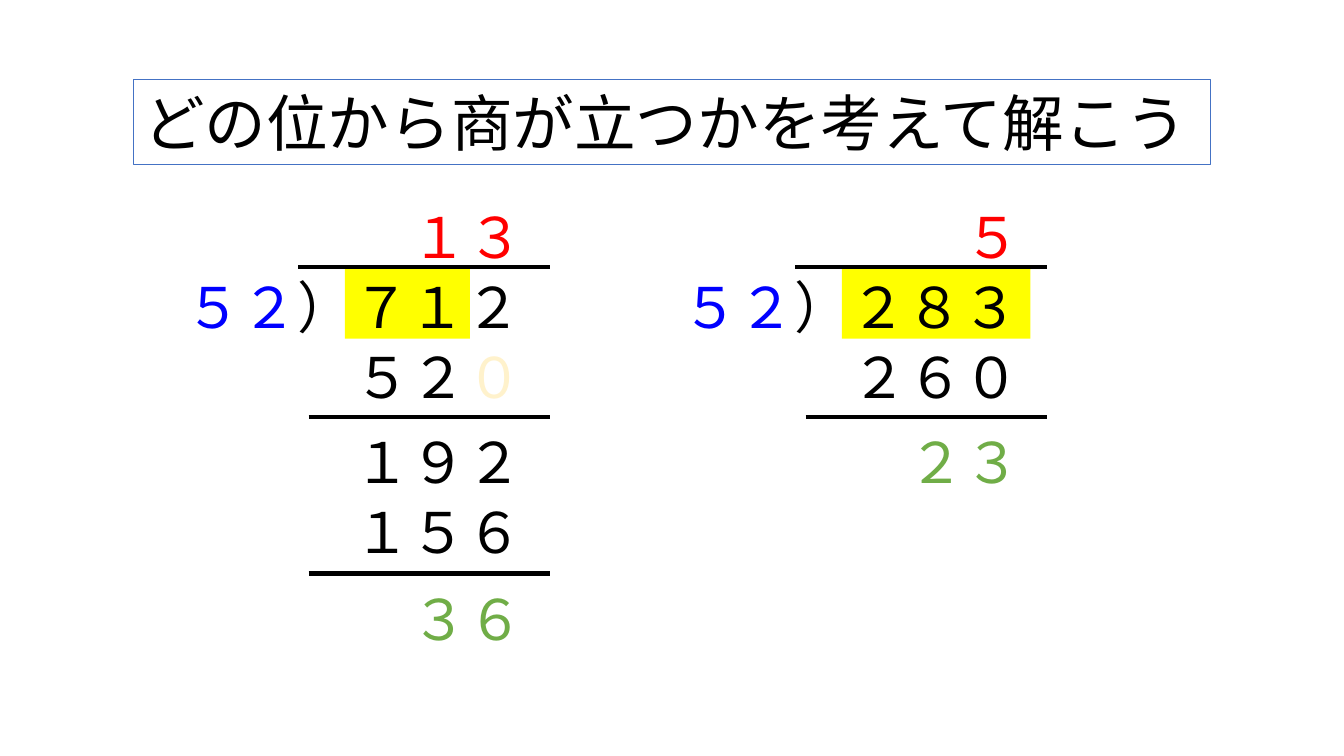
from lxml import etree
from pptx import Presentation
from pptx.dml.color import RGBColor
from pptx.enum.shapes import MSO_CONNECTOR, MSO_SHAPE
from pptx.enum.text import MSO_ANCHOR, MSO_AUTO_SIZE, PP_ALIGN
from pptx.oxml.ns import qn
from pptx.util import Inches, Pt

RECT = MSO_SHAPE.RECTANGLE
LINE = MSO_CONNECTOR.STRAIGHT
FONT = "Noto Sans CJK JP"
BLACK, BLUE, RED = "000000", "0000FF", "FF0000"
GREEN, PALE, YELLOW = "70AD47", "FFF2CC", "FFFF00"
COL, PAD, COLS = 0.56, 0.2, 6
ROWS = [1.96, 2.65, 3.35, 4.19, 4.89, 5.75]
RULES = [(1.22, 2.65), (1.32, 4.14), (1.32, 5.69)]
RIGHT = 3.71
FRAME = {"auto_size": MSO_AUTO_SIZE.SHAPE_TO_FIT_TEXT,
         "vertical_anchor": MSO_ANCHOR.TOP}


def color(code):
    """Turn a hex string into a colour."""
    return RGBColor.from_string(code)


def write(shape, runs, size, wrap):
    """Fill a shape with coloured runs of text."""
    frame = shape.text_frame
    for key, value in {**FRAME, "word_wrap": wrap}.items():
        setattr(frame, key, value)
    para = frame.paragraphs[0]
    para.alignment = PP_ALIGN.LEFT
    for text, code in runs:
        run = para.add_run()
        run.text = text
        for key, value in {"size": Pt(size), "name": FONT}.items():
            setattr(run.font, key, value)
        run.font.color.rgb = color(code)
        east = etree.SubElement(run.font._element, qn("a:ea"))
        east.set("typeface", FONT)


def box(slide, x, y, wide, high, fill=None, edge=None):
    """Add a plain rectangle."""
    shape = slide.shapes.add_shape(RECT, *map(Inches, (x, y, wide, high)))
    shape.shadow.inherit = False
    for part, code in ((shape.fill, fill), (shape.line.fill, edge)):
        if code:
            part.solid()
            part.fore_color.rgb = color(code)
        else:
            part.background()
    if edge:
        shape.line.width = Pt(0.75)
    return shape


def digits(slide, left, row, runs, skip=0):
    """Set digits on a row, ending skip columns before the ones."""
    count = sum(len(text) for text, _ in runs)
    x = left + COL * (COLS - count - skip)
    wide = 0.54 if count == 1 else COL * count + PAD
    area = (x, ROWS[row], wide, 0.77)
    write(slide.shapes.add_textbox(*map(Inches, area)), runs, 40, True)


def rule(slide, start, end, y):
    """Draw a thick level line."""
    line = slide.shapes.add_connector(LINE, *map(Inches, (start, y, end, y)))
    line.line.color.rgb = color(BLACK)
    line.line.width = Pt(3)
    etree.SubElement(line._element.spPr, qn("a:effectLst"))


def division(slide, left, mark, quotient, rows, rules):
    """Lay out one long division."""
    box(slide, left + COL * 3, ROWS[1], mark, 0.71, fill=YELLOW)
    for skip, digit in enumerate(reversed(quotient)):
        digits(slide, left, 0, [(digit, RED)], skip)
    for row, runs in enumerate(rows, 1):
        digits(slide, left, row, runs)
    for start, y in RULES[:rules]:
        rule(slide, left + start, left + RIGHT, y)


def main():
    """Build the slide and save it."""
    deck = Presentation()
    deck.slide_width, deck.slide_height = Inches(13.33), Inches(7.5)
    slide = deck.slides.add_slide(deck.slide_layouts[6])
    division(slide, 1.74, 1.24, "１３", [
        [("５２", BLUE), ("）７１２", BLACK)],
        [("５２", BLACK), ("０", PALE)],
        [("１９２", BLACK)],
        [("１５６", BLACK)],
        [("３６", GREEN)],
    ], 3)
    division(slide, 6.67, 1.87, "５", [
        [("５２", BLUE), ("）２８３", BLACK)],
        [("２６０", BLACK)],
        [("２３", GREEN)],
    ], 2)
    title = box(slide, 1.32, 0.79, 10.69, 0.84, edge="4472C4")
    write(title, [("どの位から商が立つかを考えて解こう", BLACK)], 44, False)
    deck.save("out.pptx")


if __name__ == "__main__":
    main()
